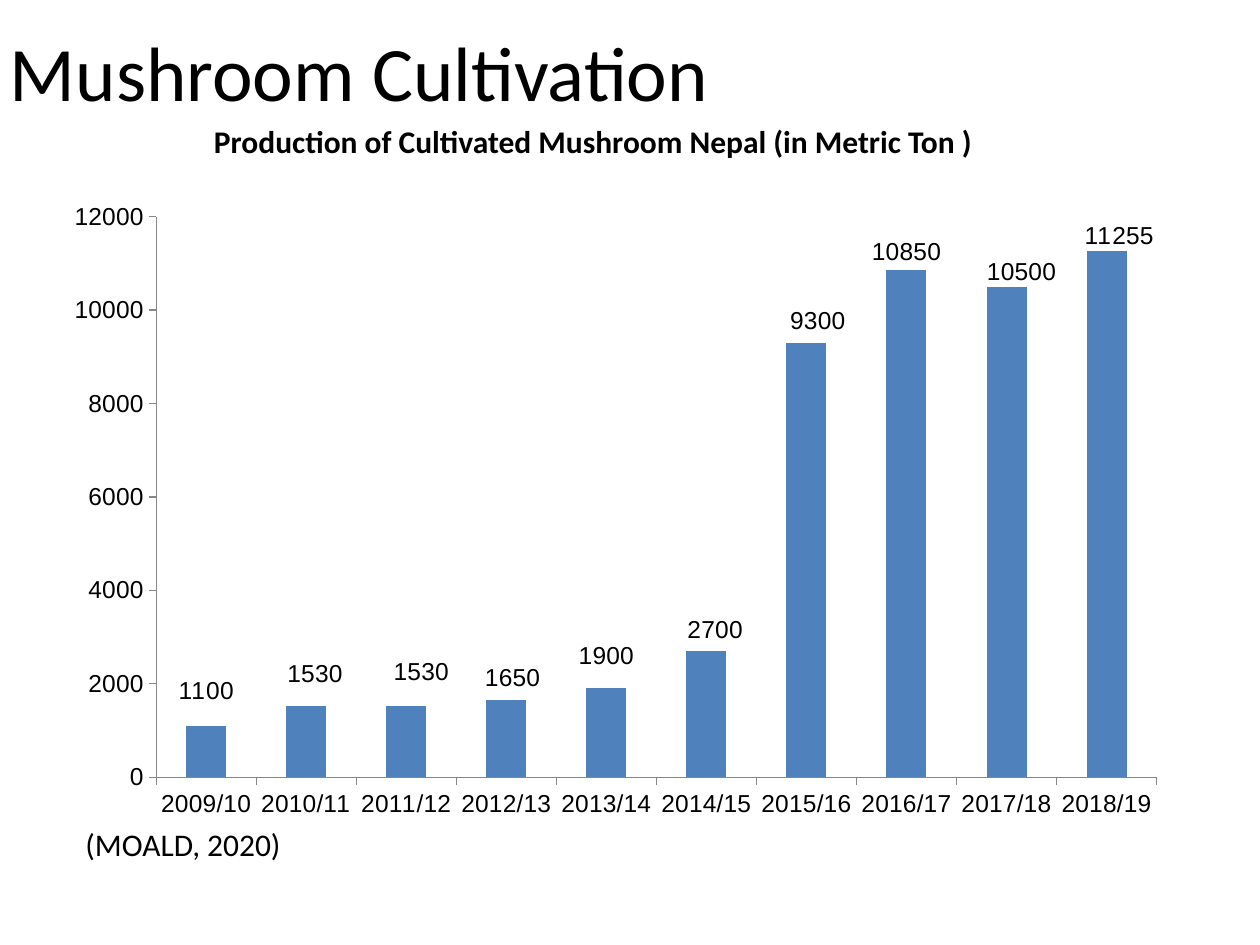
from dataclasses import dataclass
from typing import NamedTuple

from lxml.etree import SubElement
from pptx import Presentation
from pptx.chart.data import CategoryChartData as ChartData
from pptx.dml.color import RGBColor as RGB
from pptx.enum.chart import XL_CHART_TYPE as ChartType
from pptx.enum.chart import XL_LABEL_POSITION as LabelPos
from pptx.enum.chart import XL_TICK_MARK as Tick
from pptx.enum.text import MSO_ANCHOR as Anchor
from pptx.enum.text import MSO_AUTO_SIZE as AutoSize
from pptx.oxml.ns import qn
from pptx.util import Inches, Pt


@dataclass(frozen=True)
class Theme:
    ink: RGB = RGB(0, 0, 0)
    bar: RGB = RGB(0x4F, 0x81, 0xBD)
    axis: RGB = RGB(0x86, 0x86, 0x86)
    text_font: str = "Calibri"
    chart_font: str = "Arial"
    title: int = 44
    body: int = 18
    chart: int = 14


class Box(NamedTuple):
    x: float
    y: float
    w: float
    h: float

    def emu(self) -> list[int]:
        return [Inches(v) for v in self]


class Caption(NamedTuple):
    text: str
    box: Box
    size: int
    bold: bool
    frame: dict


class Year(NamedTuple):
    """One bar; shift and lift place its label from the bar's top, in inches."""
    name: str
    tons: int
    shift: float
    lift: float


THEME = Theme()
SLIDE_W, SLIDE_H = 10, 7.5
CHART = Box(0.42, 1.5, 8.94, 5.08)
PLOT = Box(0.82, 0.22, 7.94, 4.45)  # inside the chart
AXIS_MAX, AXIS_STEP = 12000, 2000

CAPTIONS = [
    Caption("Mushroom Cultivation", Box(-0.02, 0, 9, 1.12), THEME.title, False,
            dict(word_wrap=True, vertical_anchor=Anchor.MIDDLE)),
    Caption("Production of Cultivated Mushroom Nepal (in Metric Ton )",
            Box(1.6, 0.92, 6.73, 0.4), THEME.body, True,
            dict(word_wrap=True, auto_size=AutoSize.SHAPE_TO_FIT_TEXT)),
    Caption("(MOALD, 2020)", Box(0.58, 6.5, 1.77, 0.4), THEME.body, False,
            dict(word_wrap=False, auto_size=AutoSize.SHAPE_TO_FIT_TEXT)),
]
YEARS = [
    Year("2009/10", 1100, 0, 0.28),
    Year("2010/11", 1530, 0.07, 0.25),
    Year("2011/12", 1530, 0.12, 0.27),
    Year("2012/13", 1650, 0.05, 0.18),
    Year("2013/14", 1900, 0, 0.26),
    Year("2014/15", 2700, 0.07, 0.17),
    Year("2015/16", 9300, 0.09, 0.17),
    Year("2016/17", 10850, 0, 0.15),
    Year("2017/18", 10500, 0.12, 0.12),
    Year("2018/19", 11255, 0.10, 0.12),
]


def set_all(obj, values: dict) -> None:
    for name, value in values.items():
        setattr(obj, name, value)


def add_caption(s, cap: Caption) -> None:
    tf = s.shapes.add_textbox(*cap.box.emu()).text_frame
    set_all(tf, cap.frame)
    r = tf.paragraphs[0].add_run()
    r.text = cap.text
    set_all(r.font, dict(name=THEME.text_font, size=Pt(cap.size), bold=cap.bold))
    r.font.color.rgb = THEME.ink


def fill_layout(layout, values: dict) -> None:
    """Write a manual layout, given as shares of the chart."""
    for old in list(layout):
        layout.remove(old)
    manual = SubElement(layout, qn("c:manualLayout"))
    for name, value in values.items():
        SubElement(manual, qn(f"c:{name}")).set("val", str(value))


def place_plot(chart) -> None:
    area = chart.element.find(f".//{qn('c:plotArea')}")
    layout = area.find(qn("c:layout"))
    if layout is None:
        layout = SubElement(area, qn("c:layout"))
        area.insert(0, layout)
    fill_layout(layout, dict(
        layoutTarget="inner", xMode="edge", yMode="edge",
        x=PLOT.x / CHART.w, y=PLOT.y / CHART.h,
        w=PLOT.w / CHART.w, h=PLOT.h / CHART.h))


def hide_leader_lines(labels) -> None:
    leader = labels.find(qn("c:showLeaderLines"))
    if leader is None:
        leader = SubElement(labels, qn("c:showLeaderLines"))
    leader.set("val", "0")


def place_labels(series) -> None:
    """Move each label from the middle of its bar to just above the top."""
    series.data_labels.show_value = True
    for i in range(len(YEARS)):
        series.points[i].data_label.position = LabelPos.CENTER
    labels = series.data_labels._element
    hide_leader_lines(labels)
    for year, label in zip(YEARS, labels.findall(qn("c:dLbl"))):
        layout = SubElement(label, qn("c:layout"))
        label.insert(1, layout)
        half_bar = year.tons / AXIS_MAX * PLOT.h / 2
        fill_layout(layout, dict(x=year.shift / CHART.w,
                                 y=-(half_bar + year.lift) / CHART.h))


def add_production_chart(s) -> None:
    data = ChartData()
    data.categories = [year.name for year in YEARS]
    data.add_series("Series 1", [year.tons for year in YEARS])
    chart = s.shapes.add_chart(ChartType.COLUMN_STACKED, *CHART.emu(), data).chart
    set_all(chart, dict(has_title=False, has_legend=False))
    set_all(chart.font, dict(name=THEME.chart_font, size=Pt(THEME.chart)))
    chart.font.color.rgb = THEME.ink
    set_all(chart.plots[0], dict(gap_width=150, overlap=100, vary_by_categories=False))
    set_all(chart.value_axis, dict(minimum_scale=0, maximum_scale=AXIS_MAX,
                                   major_unit=AXIS_STEP))
    for axis in (chart.category_axis, chart.value_axis):
        set_all(axis, dict(has_major_gridlines=False, major_tick_mark=Tick.OUTSIDE,
                           minor_tick_mark=Tick.NONE))
        axis.format.line.color.rgb = THEME.axis
    series = chart.plots[0].series[0]
    series.format.fill.solid()
    series.format.fill.fore_color.rgb = THEME.bar
    place_plot(chart)
    place_labels(series)


def main() -> None:
    prs = Presentation()
    set_all(prs, dict(slide_width=Inches(SLIDE_W), slide_height=Inches(SLIDE_H)))
    s = prs.slides.add_slide(prs.slide_layouts[6])
    add_production_chart(s)
    for cap in CAPTIONS:
        add_caption(s, cap)
    prs.save("out.pptx")


if __name__ == "__main__":
    main()
